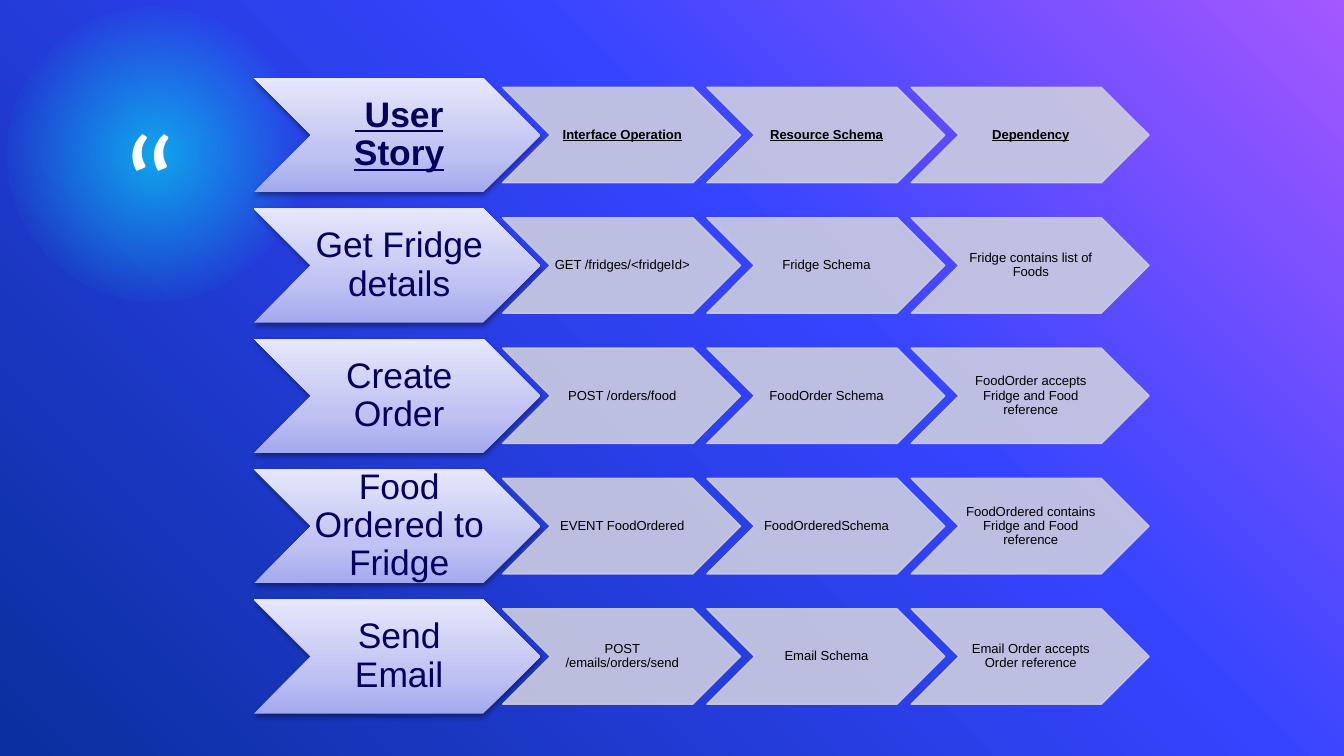
from lxml.etree import SubElement
from pptx import Presentation
from pptx.dml.color import RGBColor
from pptx.enum.shapes import MSO_SHAPE
from pptx.enum.text import MSO_ANCHOR, PP_ALIGN
from pptx.oxml.ns import qn
from pptx.util import Inches, Pt

HEAD = {"size": Pt(19), "name": "Arial", "color": "050060"}
CELL = {"size": Pt(7), "name": "Arial", "color": "000000"}
QUOTE = {"size": Pt(72), "name": "Calibri", "color": "FFFFFF"}
TITLE = {"bold": True, "underline": True}
BACK = [(0, "A458FF", 100), (39, "3544FF", 100), (100, "0A2F9E", 100)]
GLOW = [(0, "00FFFF", 54), (73, "00FFFF", 0), (100, "00FFFF", 0)]
LILAC = [(0, "A4A9EF", 100), (35, "C0C3F2", 100), (100, "E6E7FB", 100)]
ROWS = [
    (" User Story", "Interface Operation", "Resource Schema", "Dependency"),
    ("Get Fridge details", "GET /fridges/<fridgeId>", "Fridge Schema",
     "Fridge contains list of Foods"),
    ("Create Order", "POST /orders/food", "FoodOrder Schema",
     "FoodOrder accepts Fridge and Food reference"),
    ("Food Ordered to Fridge", "EVENT FoodOrdered", "FoodOrderedSchema",
     "FoodOrdered contains Fridge and Food reference"),
    ("Send Email", "POST /emails/orders/send", "Email Schema",
     "Email Order accepts Order reference"),
]


def rgb(code):
    return RGBColor.from_string(code)


def node(base, tag, **attrs):
    return SubElement(base, qn(tag), {k: str(v) for k, v in attrs.items()})


def tint(base, code, alpha):
    color = node(base, "a:srgbClr", val=code)
    if alpha < 100:
        node(color, "a:alpha", val=alpha * 1000)


class Deck:
    def __init__(self):
        self.file = Presentation()
        self.file.slide_width = Inches(10)
        self.file.slide_height = Inches(10) * 9 // 16
        self.slide = self.file.slides.add_slide(self.file.slide_layouts[6])

    def blend(self, fill, base, stops, angle=None):
        fill.solid()
        old = base.find(qn("a:solidFill"))
        grad = node(base, "a:gradFill", rotWithShape=1)
        base.replace(old, grad)
        items = node(grad, "a:gsLst")
        for place, code, alpha in stops:
            tint(node(items, "a:gs", pos=place * 1000), code, alpha)
        if angle is None:
            ring = node(grad, "a:path", path="circle")
            node(ring, "a:fillToRect", l=50000, t=50000, r=50000, b=50000)
        else:
            node(grad, "a:lin", ang=angle * 60000, scaled=0)

    def back(self, stops, angle):
        fill = self.slide.background.fill
        fill.solid()
        base = self.slide.element.find(".//" + qn("p:bgPr"))
        self.blend(fill, base, stops, angle)

    def shape(self, kind, area):
        shape = self.slide.shapes.add_shape(kind, *map(Inches, area))
        shape.shadow.inherit = False
        shape.line.fill.background()
        return shape

    def glow(self, area, stops):
        shape = self.shape(MSO_SHAPE.OVAL, area)
        self.blend(shape.fill, shape.element.spPr, stops)

    def lead(self, area, stops):
        shape = self.shape(MSO_SHAPE.CHEVRON, area)
        base = shape.element.spPr
        self.blend(shape.fill, base, stops, 270)
        shade = node(base.find(qn("a:effectLst")), "a:outerShdw",
                     blurRad=Pt(3.1), dist=Pt(1.6), dir=5400000, rotWithShape=0)
        tint(shade, "000000", 38)

    def step(self, area, code):
        shape = self.shape(MSO_SHAPE.CHEVRON, area)
        shape.line.width = Pt(0.75)
        for fill in (shape.fill, shape.line.fill):
            fill.solid()
            fill.fore_color.rgb = rgb(code)
        for color in shape.element.spPr.iter(qn("a:srgbClr")):
            node(color, "a:alpha", val=90000)

    def text(self, area, words, style, pad=(0, 0, 0, 0), center=True):
        frame = self.slide.shapes.add_textbox(*map(Inches, area)).text_frame
        frame.word_wrap = True
        for side, gap in zip(("left", "top", "right", "bottom"), pad):
            setattr(frame, "margin_" + side, Inches(gap))
        para = frame.paragraphs[0]
        if center:
            frame.vertical_anchor = MSO_ANCHOR.MIDDLE
            para.alignment = PP_ALIGN.CENTER
            para.line_spacing = 0.9
        run = para.add_run()
        run.text = words
        for key, value in style.items():
            if key == "color":
                run.font.color.rgb = rgb(value)
            else:
                setattr(run.font, key, value)


def main():
    deck = Deck()
    deck.back(BACK, 135)
    deck.glow((0.05, 0.05, 2.19, 2.19), GLOW)
    deck.text((0.9, 0.72, 0.67, 0.71), "“", QUOTE, center=False)
    for row, (story, *cells) in enumerate(ROWS):
        top = 0.58 + 0.97 * row
        extra = TITLE if row == 0 else {}
        deck.lead((1.89, top, 2.13, 0.85), LILAC)
        deck.text((2.32, top, 1.28, 0.85), story, HEAD | extra,
                  (0.02, 0.01, 0, 0.01))
        for col, words in enumerate(cells):
            left = 3.74 + 1.52 * col
            deck.step((left, top + 0.07, 1.77, 0.71), "CCCDDF")
            deck.text((left + 0.35, top + 0.07, 1.07, 0.71), words,
                      CELL | extra, (0.01, 0, 0, 0))
    deck.file.save("out.pptx")


if __name__ == "__main__":
    main()
